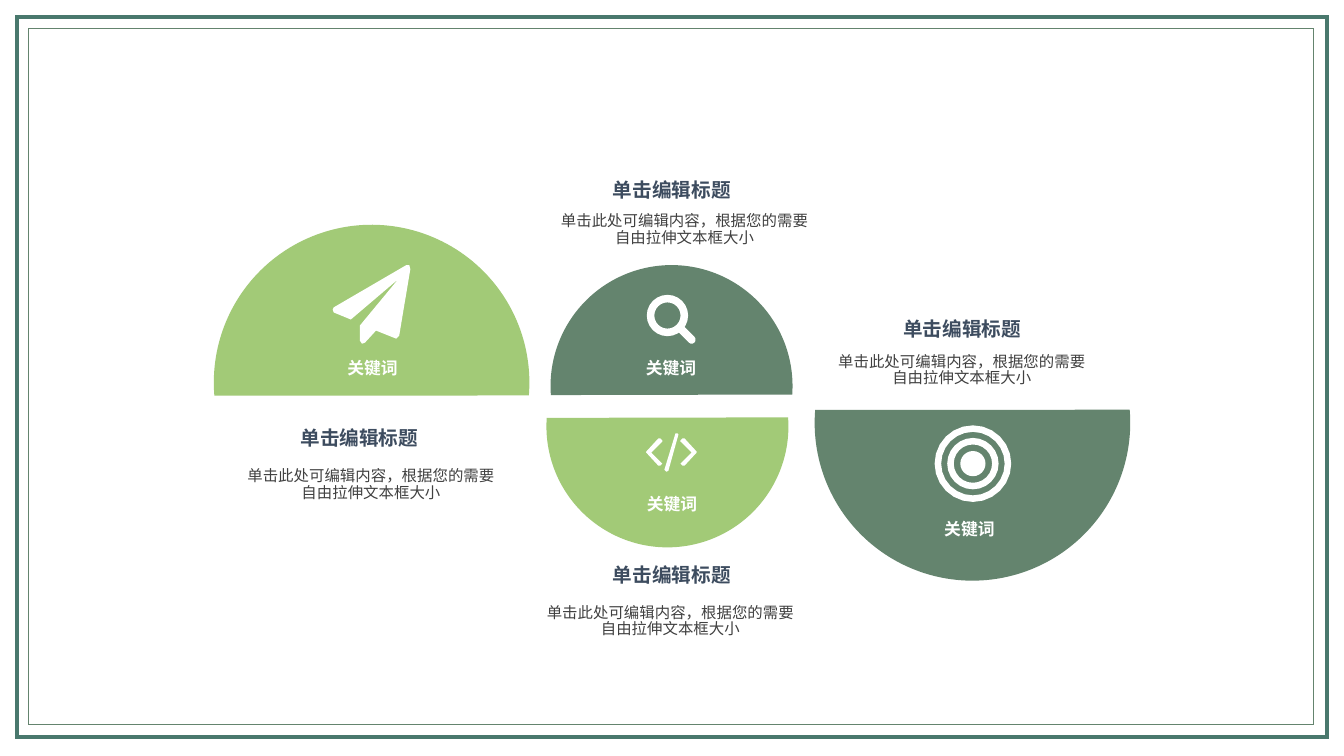
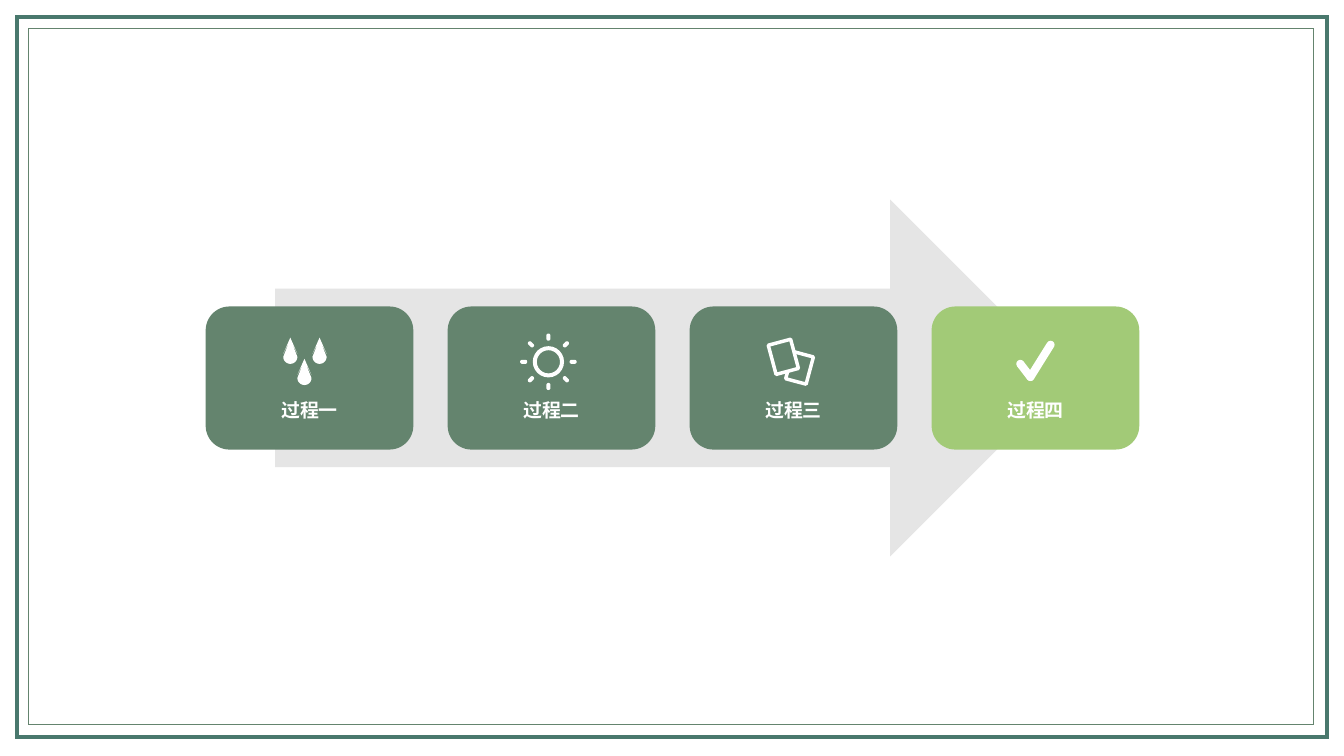
from dataclasses import dataclass
from itertools import pairwise
from math import atan2, cos, degrees, hypot, pi, sin

from lxml.etree import SubElement
from pptx import Presentation
from pptx.dml.color import RGBColor
from pptx.enum.shapes import MSO_SHAPE
from pptx.enum.text import MSO_ANCHOR, PP_ALIGN
from pptx.oxml.ns import qn
from pptx.shapes.autoshape import Shape
from pptx.slide import Slide
from pptx.util import Inches, Pt

Point = tuple[float, float]
Contour = list[Point]


@dataclass(frozen=True)
class Theme:
    dark_green: str = "64846E"
    light_green: str = "A2CA77"
    frame_green: str = "49786D"
    navy: str = "3D4C5F"
    body_gray: str = "404040"
    arrow_gray: str = "A6A6A6"
    white: str = "FFFFFF"
    heading_font: str = "Arial"
    body_font: str = "Noto Sans CJK SC"
    title_size: float = 14
    step_size: float = 13.5
    label_size: float = 12
    body_size: float = 11


THEME = Theme()


@dataclass(frozen=True)
class TextStyle:
    size: float
    color: str
    font: str
    bold: bool = False
    line_spacing: float = 1.0


TITLE = TextStyle(THEME.title_size, THEME.navy, THEME.heading_font, True)
LABEL = TextStyle(THEME.label_size, THEME.white, THEME.heading_font, True)
STEP = TextStyle(THEME.step_size, THEME.white, THEME.body_font, True)
BODY = TextStyle(THEME.body_size, THEME.body_gray, THEME.body_font, line_spacing=0.9)


@dataclass(frozen=True)
class Topic:
    dome: Point
    diameter: float
    rotation: float
    color: str
    chord: Point
    label: Point
    title: Point
    body: Point


@dataclass(frozen=True)
class Step:
    name: str
    color: str


BIG_CHORD = (38.525, 152.226)
SMALL_CHORD = (38.833, 151.826)
UP, DOWN = 111, 291
TOPICS = (
    Topic((2.12, 2.23), 3.13, UP, THEME.light_green, BIG_CHORD,
          (3.04, 3.55), (2.45, 4.23), (2.29, 4.6)),
    Topic((5.46, 2.63), 2.4, UP, THEME.dark_green, SMALL_CHORD,
          (6, 3.55), (5.55, 1.77), (5.4, 2.07)),
    Topic((5.42, 3.03), 2.4, DOWN, THEME.light_green, SMALL_CHORD,
          (6.01, 4.9), (5.55, 5.58), (5.26, 5.95)),
    Topic((8.08, 2.63), 3.13, DOWN, THEME.dark_green, BIG_CHORD,
          (8.96, 5.15), (8.43, 3.14), (8.15, 3.46)),
)
STEPS = (
    Step("过程一", THEME.dark_green),
    Step("过程二", THEME.dark_green),
    Step("过程三", THEME.dark_green),
    Step("过程四", THEME.light_green),
)


def paint(shape: Shape, fill: str | None, line: str | None = None, weight: float = 0) -> Shape:
    shape.shadow.inherit = False
    if fill:
        shape.fill.solid()
        shape.fill.fore_color.rgb = RGBColor.from_string(fill)
    else:
        shape.fill.background()
    if line:
        shape.line.color.rgb = RGBColor.from_string(line)
        shape.line.width = Pt(weight)
    else:
        shape.line.fill.background()
    return shape


def add_preset(page: Slide, kind: MSO_SHAPE, left: float, top: float, width: float,
               height: float, fill: str | None, line: str | None = None,
               weight: float = 0, rotation: float = 0) -> Shape:
    shape = page.shapes.add_shape(kind, Inches(left), Inches(top), Inches(width), Inches(height))
    shape.rotation = rotation
    return paint(shape, fill, line, weight)


def add_centered(page: Slide, kind: MSO_SHAPE, center: Point, width: float, height: float,
                 fill: str, line: str | None = None, weight: float = 0,
                 rotation: float = 0) -> Shape:
    left, top = center[0] - width / 2, center[1] - height / 2
    return add_preset(page, kind, left, top, width, height, fill, line, weight, rotation)


def add_strokes(page: Slide, points: list[Point], width: float) -> None:
    """Join the points with white round-ended bars."""
    for (x1, y1), (x2, y2) in pairwise(points):
        bar = add_centered(page, MSO_SHAPE.ROUNDED_RECTANGLE, ((x1 + x2) / 2, (y1 + y2) / 2),
                           hypot(x2 - x1, y2 - y1) + width, width, THEME.white,
                           rotation=degrees(atan2(y2 - y1, x2 - x1)))
        bar.adjustments[0] = 0.5


def arc(center: Point, radius: float, start: float, sweep: float) -> Contour:
    steps = 24
    angles = [start + sweep * index / steps for index in range(steps + 1)]
    return [(center[0] + radius * cos(a), center[1] + radius * sin(a)) for a in angles]


def circle(center: Point, diameter: float) -> Contour:
    return arc(center, diameter / 2, 0, 2 * pi)


def add_icon(page: Slide, contours: list[Contour]) -> None:
    """Draw one white outline; a contour inside another is a hole."""
    first, *others = [[(Inches(x), Inches(y)) for x, y in contour] for contour in contours]
    builder = page.shapes.build_freeform(*first[0])
    builder.add_line_segments(first[1:], close=True)
    for contour in others:
        builder.move_to(*contour[0])
        builder.add_line_segments(contour[1:], close=True)
    paint(builder.convert_to_shape(), THEME.white)


def write(shape: Shape, text: str, style: TextStyle, anchor: MSO_ANCHOR = MSO_ANCHOR.TOP,
          inset_x: float = 0, inset_y: float = 0) -> None:
    frame = shape.text_frame
    frame_format = {
        "word_wrap": True, "vertical_anchor": anchor,
        "margin_left": Inches(inset_x), "margin_right": Inches(inset_x),
        "margin_top": Inches(inset_y), "margin_bottom": Inches(inset_y),
    }
    para = frame.paragraphs[0]
    para_format = {"alignment": PP_ALIGN.CENTER, "line_spacing": style.line_spacing}
    span = para.add_run()
    span.text = text
    font_format = {"size": Pt(style.size), "bold": style.bold, "name": style.font}
    for target, values in ((frame, frame_format), (para, para_format), (span.font, font_format)):
        for name, value in values.items():
            setattr(target, name, value)
    span.font.color.rgb = RGBColor.from_string(style.color)
    SubElement(span._r.get_or_add_rPr(), qn("a:ea"), typeface=THEME.body_font)


def add_text(page: Slide, place: Point, width: float, height: float, text: str,
             style: TextStyle, inset_x: float = 0, inset_y: float = 0) -> None:
    box = page.shapes.add_textbox(Inches(place[0]), Inches(place[1]),
                                  Inches(width), Inches(height))
    write(box, text, style, inset_x=inset_x, inset_y=inset_y)


def add_page(deck: Presentation) -> Slide:
    """Add a blank page with the double, sharp-cornered frame."""
    page = deck.slides.add_slide(deck.slide_layouts[6])
    for left, width, height, color, weight in ((0.17, 12.99, 7.14, THEME.frame_green, 3),
                                               (0.28, 12.75, 6.91, THEME.dark_green, 0.5)):
        border = add_preset(page, MSO_SHAPE.RECTANGLE, left, left, width, height,
                            None, color, weight)
        SubElement(border._element.spPr.find(qn("a:ln")), qn("a:miter"), lim="800000")
    return page


def draw_paper_plane(page: Slide) -> None:
    add_icon(page, [[(4.03, 2.63), (4.06, 2.63), (4.07, 2.67), (3.96, 3.33), (3.93, 3.36),
                     (3.73, 3.28), (3.62, 3.4), (3.59, 3.41), (3.57, 3.38), (3.57, 3.23),
                     (3.95, 2.77), (3.48, 3.17), (3.31, 3.1), (3.3, 3.07), (3.31, 3.05)]])


def draw_magnifier(page: Slide) -> None:
    lens = (6.62, 3.13)
    add_icon(page, [circle(lens, 0.41), circle(lens, 0.26)])
    add_strokes(page, [(6.75, 3.26), (6.86, 3.37)], 0.08)


def draw_code_sign(page: Slide) -> None:
    middle = 6.66
    bracket = [(0.11, 4.62), (0.13, 4.62), (0.25, 4.49), (0.25, 4.48), (0.13, 4.35),
               (0.11, 4.35), (0.09, 4.37), (0.09, 4.38), (0.2, 4.49), (0.09, 4.6)]
    slash = [(6.63, 4.67), (6.61, 4.68), (6.59, 4.66), (6.7, 4.3), (6.72, 4.3), (6.73, 4.31)]
    add_icon(page, [[(middle + side * x, y) for x, y in bracket] for side in (-1, 1)] + [slash])


def draw_target(page: Slide) -> None:
    add_icon(page, [circle((9.65, 4.6), diameter)
                    for diameter in (0.76, 0.63, 0.51, 0.38, 0.25)])


def draw_drops(page: Slide) -> None:
    slope = [(0.07, -0.03), (0.05, -0.07), (0.03, -0.11), (0.01, -0.15)]
    drops = []
    for x, y in ((2.88, 3.54), (3.17, 3.54), (3.02, 3.75)):
        right = [(x + across, y + down) for across, down in slope]
        left = [(x - across, y + down) for across, down in reversed(slope)]
        drops.append(arc((x, y), 0.07, 0, pi) + left + [(x, y - 0.19)] + right)
    add_icon(page, drops)


def draw_sun(page: Slide) -> None:
    x, y = center = (5.44, 3.59)
    contours = [circle(center, 0.31), circle(center, 0.23)]
    for index in range(8):
        turn = index * pi / 4
        inner, outer = [(x + r * cos(turn), y + r * sin(turn)) for r in (0.23, 0.26)]
        contours.append(arc(outer, 0.02, turn - pi / 2, pi) + arc(inner, 0.02, turn + pi / 2, pi))
    add_icon(page, contours)


def draw_sheets(page: Slide) -> None:
    for center, width, height, rotation in (((7.93, 3.65), 0.21, 0.28, 15),
                                            ((7.77, 3.54), 0.23, 0.3, 345)):
        add_centered(page, MSO_SHAPE.RECTANGLE, center, width, height, THEME.dark_green,
                     THEME.white, 2.5, rotation)


def draw_check(page: Slide) -> None:
    add_strokes(page, [(10.12, 3.61), (10.22, 3.74), (10.42, 3.42)], 0.08)


def build_topics(deck: Presentation) -> None:
    page = add_page(deck)
    for topic in TOPICS:
        dome = add_preset(page, MSO_SHAPE.CHORD, *topic.dome, topic.diameter, topic.diameter,
                          topic.color, rotation=topic.rotation)
        for index, angle in enumerate(topic.chord):
            dome.adjustments[index] = angle
        add_text(page, topic.label, 1.31, 0.23, "关键词", LABEL)
        add_text(page, topic.title, 2.23, 0.23, "单击编辑标题", TITLE)
        add_text(page, topic.body, 2.78, 0.43,
                 "单击此处可编辑内容，根据您的需要自由拉伸文本框大小", BODY, 0.1, 0.05)
    for draw_icon in (draw_paper_plane, draw_magnifier, draw_code_sign, draw_target):
        draw_icon(page)


def build_process(deck: Presentation) -> None:
    page = add_page(deck)
    arrow = add_preset(page, MSO_SHAPE.RIGHT_ARROW, 2.73, 1.98, 7.87, 3.54, THEME.arrow_gray)
    color = arrow._element.spPr.find(qn("a:solidFill"))[0]
    SubElement(color, qn("a:alpha"), val="29000")
    for index, step in enumerate(STEPS):
        card = add_preset(page, MSO_SHAPE.ROUNDED_RECTANGLE, 2.04 + 2.4 * index, 3.04,
                          2.06, 1.42, step.color)
        write(card, step.name, STEP, MSO_ANCHOR.BOTTOM, 0.1, 0.21)
    for draw_icon in (draw_drops, draw_sun, draw_sheets, draw_check):
        draw_icon(page)


def main() -> None:
    deck = Presentation()
    deck.slide_width, deck.slide_height = Inches(13.33), Inches(7.5)
    build_topics(deck)
    build_process(deck)
    deck.save("out.pptx")


if __name__ == "__main__":
    main()
